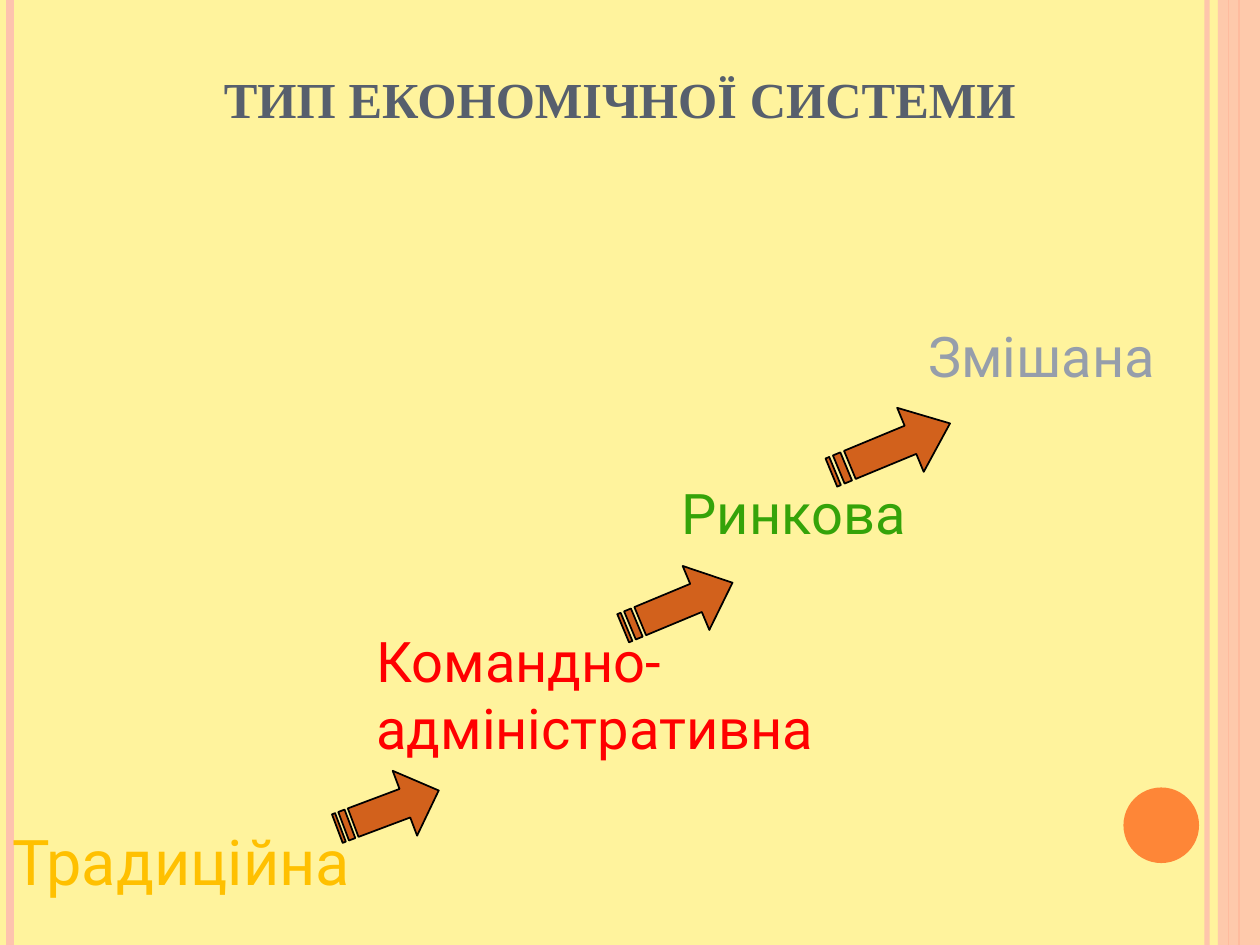
from dataclasses import dataclass

from lxml import etree
from pptx import Presentation
from pptx.dml.color import RGBColor
from pptx.enum.shapes import MSO_CONNECTOR, MSO_SHAPE
from pptx.enum.text import MSO_ANCHOR, PP_ALIGN
from pptx.oxml.ns import qn
from pptx.util import Pt

STRAIGHT = MSO_CONNECTOR.STRAIGHT
RECT, OVAL = MSO_SHAPE.RECTANGLE, MSO_SHAPE.OVAL
LEFT, CENTER = PP_ALIGN.LEFT, PP_ALIGN.CENTER
TOP, BOTTOM = MSO_ANCHOR.TOP, MSO_ANCHOR.BOTTOM

WIDTH, HEIGHT = 720, 540
ARROW_HEIGHT = 39.6
COLORS = {
    "background": "FFF39D", "peach": "FEC3AE", "orange": "FE8637",
    "title": "575F6D", "traditional": "FFC000", "command": "FF0000",
    "market": "35A309", "mixed": "969EAB", "arrow": "D2611C", "outline": "000000",
}


@dataclass
class Stripe:
    x: float
    weight: float
    color: str
    opacity: int = 100


@dataclass
class Panel:
    kind: int
    box: tuple[float, float, float, float]
    color: str
    opacity: int = 100


@dataclass
class Label:
    lines: list[str]
    box: tuple[float, float, float, float]
    color: str
    size: float = 32
    font: str = "Roboto"
    bold: bool = False
    small_caps: bool = False
    align: int = LEFT
    anchor: int = TOP
    wrap: bool = True


@dataclass
class Arrow:
    x: float
    y: float
    width: float
    angle: float


STRIPES = [
    Stripe(689.8, 3, "peach", 93), Stripe(5.8, 4.5, "peach"),
    Stripe(708, 1.5, "orange"), Stripe(702, 0.75, "orange"),
]
PANELS = [
    Panel(RECT, (696, 0, 24, HEIGHT), "peach", 87),
    Panel(OVAL, (642, 450, 43.2, 43.2), "orange"),
]
LABELS = [
    Label(["тип економічної системи"], (22.3, 23.8, 663.8, 54.7), "title", 36,
          "Times New Roman", True, True, CENTER, BOTTOM),
    Label(["Традиційна"], (0, 466.6, 253.4, 51.1), "traditional", 36),
    Label(["Командно-", "адміністративна"], (208, 354.2, 291, 85), "command", wrap=False),
    Label(["Ринкова"], (382.3, 270, 213.8, 46.1), "market"),
    Label(["Змішана"], (523.4, 180, 180, 46.1), "mixed"),
]
ARROWS = [
    Arrow(190.8, 442.8, 61.9, 339.4),
    Arrow(353.5, 326.2, 67.7, 337.4),
    Arrow(472.3, 236.2, 73.4, 337.5),
]


def rgb(name: str) -> RGBColor:
    return RGBColor.from_string(COLORS[name])


def paint(fill, color: str, opacity: int = 100) -> None:
    """Fill with a solid colour, see-through when opacity is below 100."""
    fill.solid()
    fill.fore_color.rgb = rgb(color)
    if opacity < 100:
        clr = fill._xPr.find(".//" + qn("a:srgbClr"))
        etree.SubElement(clr, qn("a:alpha")).set("val", str(opacity * 1000))


def draw_stripe(s, stripe: Stripe) -> None:
    x = Pt(stripe.x)
    line = s.shapes.add_connector(STRAIGHT, x, 0, x, Pt(HEIGHT))
    line.line.width = Pt(stripe.weight)
    paint(line.line.fill, stripe.color, stripe.opacity)
    etree.SubElement(line._element.spPr, qn("a:effectLst"))


def draw_panel(s, panel: Panel) -> None:
    sp = s.shapes.add_shape(panel.kind, *map(Pt, panel.box))
    sp.shadow.inherit = False
    sp.line.fill.background()
    paint(sp.fill, panel.color, panel.opacity)


def draw_label(s, label: Label) -> None:
    tf = s.shapes.add_textbox(*map(Pt, label.box)).text_frame
    tf.word_wrap = label.wrap
    tf.vertical_anchor = label.anchor
    font = {"name": label.font, "size": Pt(label.size), "bold": label.bold}
    for i, line in enumerate(label.lines):
        p = tf.add_paragraph() if i else tf.paragraphs[0]
        p.alignment = label.align
        r = p.add_run()
        r.text = line
        for key, value in font.items():
            setattr(r.font, key, value)
        r.font.color.rgb = rgb(label.color)
        if label.small_caps:
            r._r.get_or_add_rPr().set("cap", "small")


def draw_arrow(s, arrow: Arrow) -> None:
    """Draw a right arrow with two tail stripes, turned about its centre."""
    top, bottom = 0.28, 0.72
    head = [(2 / 3, 0), (2 / 3, top), (5 / 32, top), (5 / 32, bottom),
            (2 / 3, bottom), (2 / 3, 1), (1, 0.5)]
    tails = [[(a, top), (a, bottom), (b, bottom), (b, top)]
             for a, b in ((1 / 16, 1 / 8), (0, 1 / 32))]
    contours = [[(Pt(arrow.x + u * arrow.width), Pt(arrow.y + v * ARROW_HEIGHT))
                 for u, v in outline] for outline in (head, *tails)]
    builder = s.shapes.build_freeform(*contours[0][0])
    for i, (start, *rest) in enumerate(contours):
        if i:
            builder.move_to(*start)
        builder.add_line_segments(rest, close=True)
    sp = builder.convert_to_shape()
    sp.rotation = arrow.angle
    sp.shadow.inherit = False
    paint(sp.fill, "arrow")
    paint(sp.line.fill, "outline")
    sp.line.width = Pt(1)


def main() -> None:
    prs = Presentation()
    prs.slide_width, prs.slide_height = Pt(WIDTH), Pt(HEIGHT)
    s = prs.slides.add_slide(prs.slide_layouts[6])
    paint(s.background.fill, "background")
    for items, draw in ((STRIPES, draw_stripe), (PANELS, draw_panel),
                        (LABELS, draw_label), (ARROWS, draw_arrow)):
        for item in items:
            draw(s, item)
    prs.save("out.pptx")


if __name__ == "__main__":
    main()
